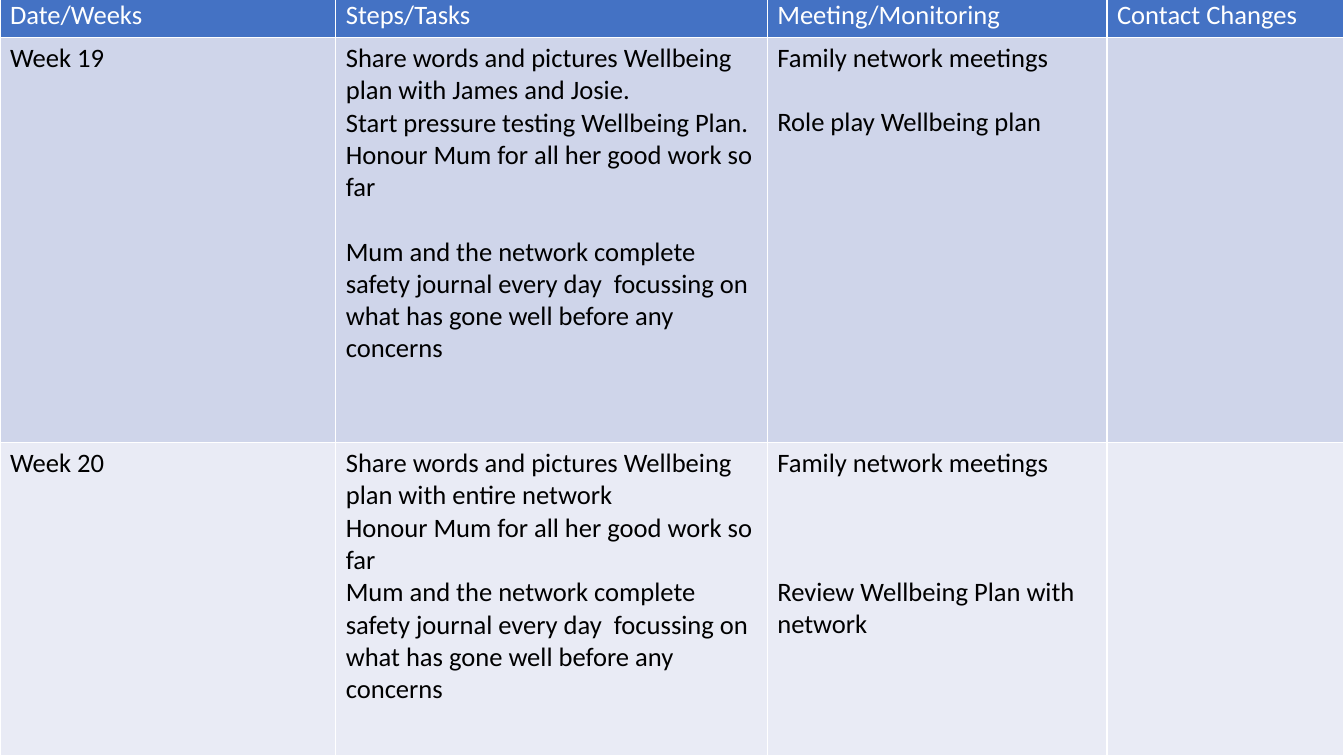
from pptx import Presentation
from pptx.dml.color import RGBColor
from pptx.util import Inches, Pt

COLORS = {
    "header": "4472C4",
    "week_19": "CFD5EA",
    "week_20": "E9EBF5",
    "header_text": "FFFFFF",
    "body_text": "000000",
}
LINE = 23
HONOUR = "Honour Mum for all her good work so far"
JOURNAL = (
    "Mum and the network complete safety journal every day  focussing on "
    "what has gone well before any concerns"
)
MEETINGS = "Family network meetings"

COLUMN_WIDTHS = [3.33, 4.28, 3.37, 2.35]
ROW_HEIGHTS = [0.43, 4.02, 3.11]
PLAN = [
    ("header", "header_text", [
        [("Date/Weeks", 0)],
        [("Steps/Tasks", 0)],
        [("Meeting/Monitoring", 0)],
        [("Contact Changes", 0)],
    ]),
    ("week_19", "body_text", [
        [("Week 19", 0)],
        [
            ("Share words and pictures Wellbeing plan with James and Josie.", 0),
            ("Start pressure testing Wellbeing Plan.", 0),
            (HONOUR, 0),
            (JOURNAL, 1),
        ],
        [(MEETINGS, 0), ("Role play Wellbeing plan", 1)],
        [],
    ]),
    ("week_20", "body_text", [
        [("Week 20", 0)],
        [
            ("Share words and pictures Wellbeing plan with entire network", 0),
            (HONOUR, 0),
            (JOURNAL, 0),
        ],
        [(MEETINGS, 0), ("Review Wellbeing Plan with network", 3)],
        [],
    ]),
]


class PlanSlide:
    def __init__(self, deck, font, size):
        self.slide = deck.slides.add_slide(deck.slide_layouts[6])
        self.font = font
        self.size = size

    def table(self, left, top, widths, heights, plan):
        grid = self.slide.shapes.add_table(
            len(heights), len(widths), Inches(left), Inches(top),
            Inches(sum(widths)), Inches(sum(heights)),
        ).table
        for column, width in zip(grid.columns, widths):
            column.width = Inches(width)
        for row, height, (fill, ink, entries) in zip(grid.rows, heights, plan):
            row.height = Inches(height)
            for cell, lines in zip(row.cells, entries):
                self.cell(cell, fill, ink, lines)

    def cell(self, cell, fill, ink, lines):
        cell.fill.solid()
        cell.fill.fore_color.rgb = RGBColor.from_string(COLORS[fill])
        cell.text_frame.text = "\n".join(words for words, _ in lines)
        for paragraph, (_, gap_lines) in zip(cell.text_frame.paragraphs, lines):
            if gap_lines:
                paragraph.space_before = Pt(gap_lines * LINE)
            for run in paragraph.runs:
                run.font.name = self.font
                run.font.size = Pt(self.size)
                run.font.bold = False
                run.font.color.rgb = RGBColor.from_string(COLORS[ink])


def main():
    deck = Presentation()
    deck.slide_width = Inches(13.33)
    deck.slide_height = Inches(7.5)
    page = PlanSlide(deck, "Calibri", 19)
    page.table(0, -0.06, COLUMN_WIDTHS, ROW_HEIGHTS, PLAN)
    deck.save("out.pptx")


if __name__ == "__main__":
    main()
